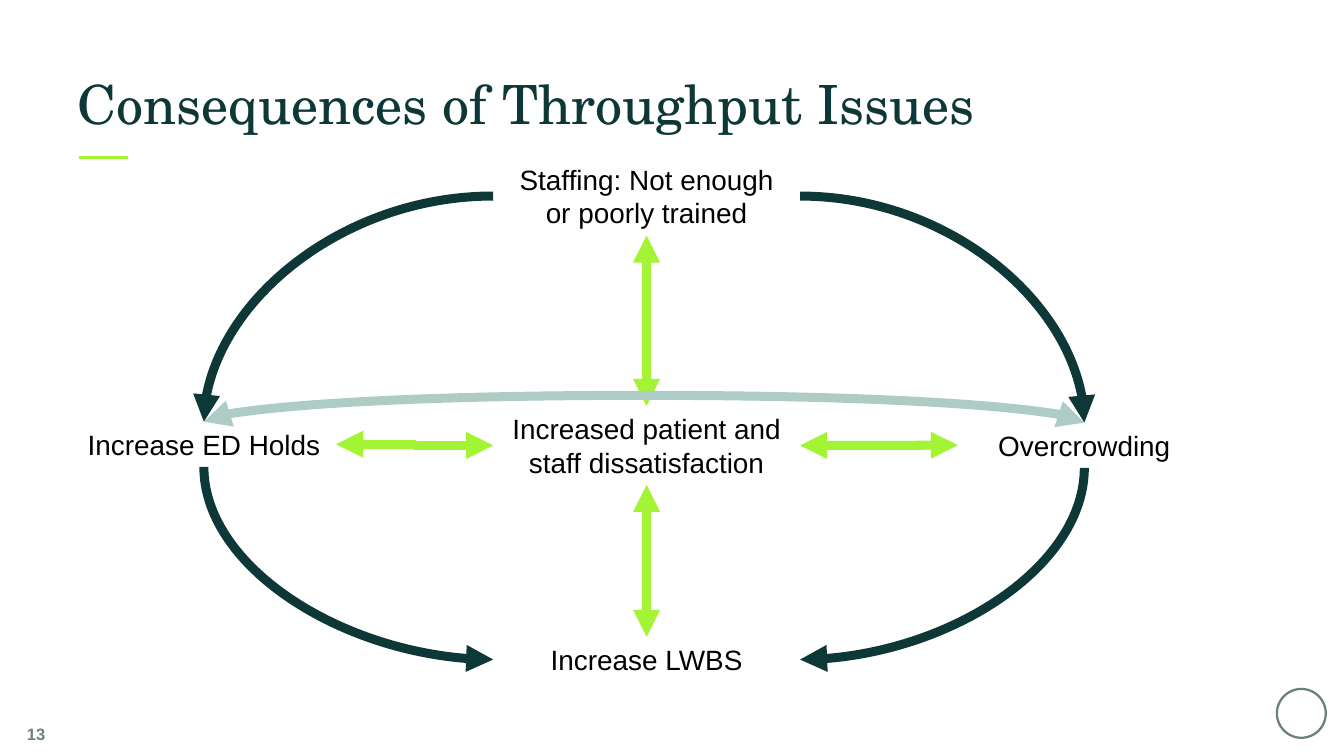
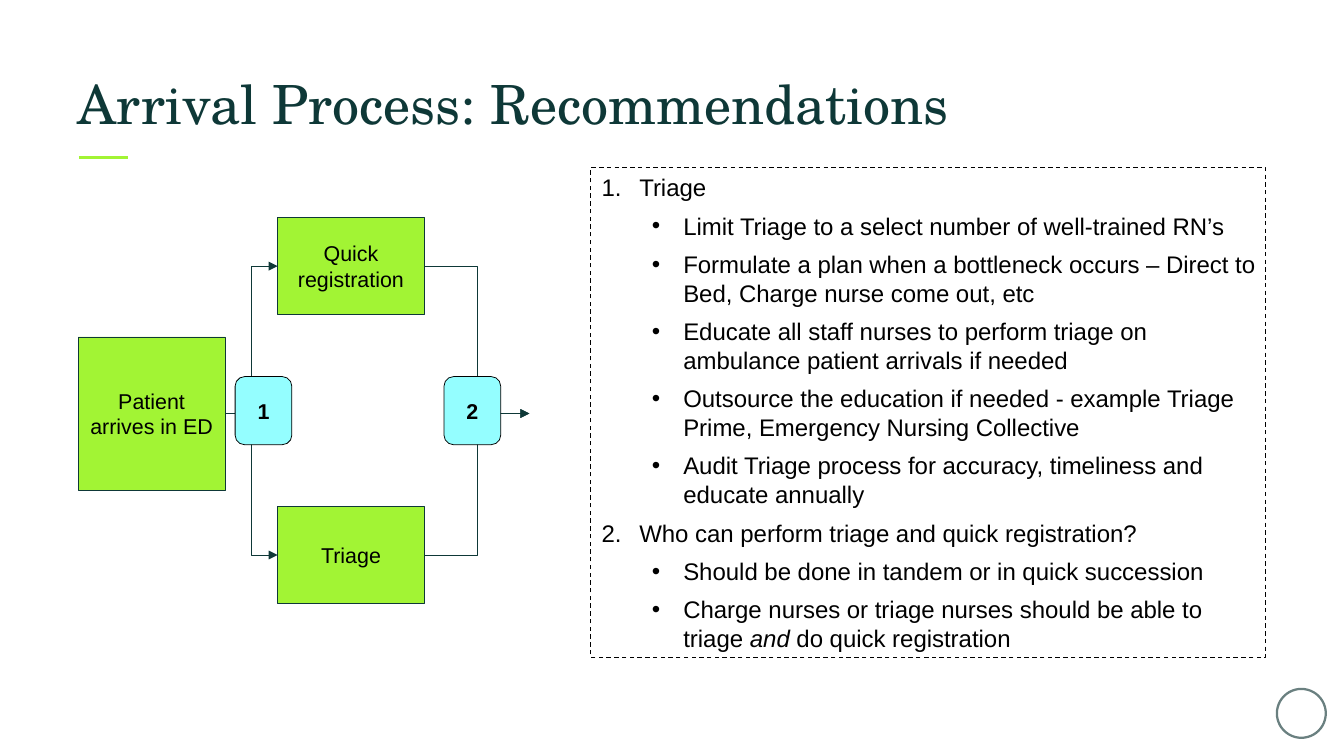
from math import cos, radians, sin

from lxml.etree import SubElement
from pptx import Presentation
from pptx.dml.color import RGBColor
from pptx.enum.dml import MSO_LINE
from pptx.enum.shapes import MSO_CONNECTOR, MSO_SHAPE
from pptx.enum.text import MSO_ANCHOR, MSO_AUTO_SIZE, PP_ALIGN
from pptx.oxml.ns import qn
from pptx.util import Pt

PINE = RGBColor(0x0E, 0x38, 0x37)
LIME = RGBColor(0xA2, 0xF4, 0x34)
MIST = RGBColor(0xAD, 0xCC, 0xC6)
AQUA = RGBColor(0x94, 0xFE, 0xFF)
SLATE = RGBColor(0x6A, 0x80, 0x80)
BLACK = RGBColor(0, 0, 0)
SERIF, SANS = "TeX Gyre Schola", "Arial"
TOP, LEFT, BOTTOM, RIGHT = range(4)

RECOMMENDATIONS = [
    ("Triage", [
        ["Limit Triage to a select number of well-trained RN’s"],
        ["Formulate a plan when a bottleneck occurs – Direct to Bed, "
         "Charge nurse come out, etc"],
        ["Educate all staff nurses to perform triage on ambulance patient "
         "arrivals if needed"],
        ["Outsource the education if needed - example Triage Prime, "
         "Emergency Nursing Collective"],
        ["Audit Triage process for accuracy, timeliness and educate annually"],
    ]),
    ("Who can perform triage and quick registration?", [
        ["Should be done in tandem or in quick succession"],
        ["Charge nurses or triage nurses should be able to triage ", "and",
         " do quick registration"],
    ]),
]


def style(para, size, colour=BLACK, name=SANS, bold=False):
    font = para.font
    font.name, font.size, font.bold = name, Pt(size), bold
    font.color.rgb = colour


def write(box, text, size, align=PP_ALIGN.CENTER, anchor=MSO_ANCHOR.MIDDLE, **look):
    frame = box.text_frame
    frame.word_wrap = True
    frame.vertical_anchor = anchor
    para = frame.paragraphs[0]
    para.text, para.alignment = text, align
    style(para, size, **look)
    return frame


def add_label(page, left, top, width, height, text):
    box = page.shapes.add_textbox(Pt(left), Pt(top), Pt(width), Pt(height))
    write(box, text, 18.6).auto_size = MSO_AUTO_SIZE.SHAPE_TO_FIT_TEXT
    return box


def add_panel(page, preset, left, top, width, height, fill, outline, weight):
    panel = page.shapes.add_shape(preset, Pt(left), Pt(top), Pt(width), Pt(height))
    panel.shadow.inherit = False
    if fill is None:
        panel.fill.background()
    else:
        panel.fill.solid()
        panel.fill.fore_color.rgb = fill
    panel.line.color.rgb = outline
    panel.line.width = Pt(weight)
    return panel


def middle(box, site):
    """Return the middle of a box's side."""
    x = {LEFT: 0, RIGHT: box.width}.get(site, box.width // 2)
    y = {TOP: 0, BOTTOM: box.height}.get(site, box.height // 2)
    return box.left + x, box.top + y


def link(page, route, start, end, colour, weight, ends=("tailEnd",), turn=0):
    """Draw a connector whose frame is turned clockwise by some quarter turns."""
    half_x, half_y = (end[0] - start[0]) / 2, (end[1] - start[1]) / 2
    centre_x, centre_y = start[0] + half_x, start[1] + half_y
    c, s = round(cos(radians(turn))), round(sin(radians(turn)))
    local_x, local_y = c * half_x + s * half_y, c * half_y - s * half_x
    line = page.shapes.add_connector(
        route, int(centre_x - local_x), int(centre_y - local_y),
        int(centre_x + local_x), int(centre_y + local_y))
    line.line.color.rgb = colour
    line.line.width = Pt(weight)
    properties = line._element.spPr
    if turn:
        properties.find(qn("a:xfrm")).set("rot", str(turn * 60000))
    for end_name in ends:
        SubElement(properties.find(qn("a:ln")), qn("a:" + end_name), type="triangle")
    SubElement(properties, qn("a:effectLst"))
    return line


def join(page, route, begin, end, *look, **more):
    """Link two (box, side) pairs and fasten both ends."""
    line = link(page, route, middle(*begin), middle(*end), *look, **more)
    line.begin_connect(*begin)
    line.end_connect(*end)


def add_arc(page, begin, end, turn):
    line = link(page, MSO_CONNECTOR.CURVE, middle(*begin), middle(*end), PINE, 6, turn=turn)
    line._element.spPr.find(qn("a:prstGeom")).set("prst", "curvedConnector2")


def add_bow(page, begin, end, rise):
    """Draw a shallow curve with two heads that rises above both its ends."""
    start, finish = middle(*begin), middle(*end)
    line = link(page, MSO_CONNECTOR.CURVE, start, finish, MIST, 6,
                ends=("headEnd", "tailEnd"), turn=270)
    bend = round(-Pt(rise) / (finish[1] - start[1]) * 100000)
    values = line._element.spPr.find(qn("a:prstGeom")).find(qn("a:avLst"))
    SubElement(values, qn("a:gd"), name="adj1", fmla=f"val {bend}")


def add_frame(page, title):
    """Place the title, its accent rule and the round corner mark."""
    add_panel(page, MSO_SHAPE.OVAL, 851, 459.3, 32.6, 32.6, None, SLATE, 1.5)
    link(page, MSO_CONNECTOR.STRAIGHT, (Pt(52.6), Pt(105)), (Pt(85.3), Pt(105)),
         LIME, 2, ends=())
    box = page.shapes.add_textbox(Pt(51.8), Pt(36), Pt(792), Pt(54))
    frame = write(box, title, 36, PP_ALIGN.LEFT, MSO_ANCHOR.BOTTOM,
                  colour=PINE, name=SERIF)
    frame.margin_left = frame.margin_right = frame.margin_top = frame.margin_bottom = 0


def add_page_number(page, number):
    box = page.shapes.add_textbox(0, Pt(474.3), Pt(30.2), Pt(30.2))
    frame = write(box, number, 11, PP_ALIGN.RIGHT, colour=SLATE, bold=True)
    frame.margin_left = frame.margin_right = frame.margin_top = frame.margin_bottom = 0


def add_cycle(page, left, top):
    column = left + 281.2
    staffing = add_label(page, column, top, 204.5, 52.6,
                         "Staffing: Not enough or poorly trained")
    dissatisfaction = add_label(page, column, top + 166.3, 204.5, 52.6,
                                "Increased patient and staff dissatisfaction")
    overcrowding = add_label(page, left + 590.9, top + 177.3, 168.5, 30.2, "Overcrowding")
    walkouts = add_label(page, column, top + 320.2, 204.5, 30.2, "Increase LWBS")
    holds = add_label(page, left + 0.2, top + 176.7, 176.4, 30.2, "Increase ED Holds")

    add_arc(page, (staffing, RIGHT), (overcrowding, TOP), 0)
    add_arc(page, (overcrowding, BOTTOM), (walkouts, RIGHT), 90)
    for route, begin, end in [
        (MSO_CONNECTOR.ELBOW, (holds, RIGHT), (dissatisfaction, LEFT)),
        (MSO_CONNECTOR.STRAIGHT, (staffing, BOTTOM), (dissatisfaction, TOP)),
        (MSO_CONNECTOR.STRAIGHT, (dissatisfaction, BOTTOM), (walkouts, TOP)),
        (MSO_CONNECTOR.STRAIGHT, (dissatisfaction, RIGHT), (overcrowding, LEFT)),
    ]:
        join(page, route, begin, end, LIME, 6, ends=("headEnd", "tailEnd"))
    add_arc(page, (staffing, LEFT), (holds, TOP), 180)
    add_bow(page, (holds, TOP), (overcrowding, TOP), 17.7)
    add_arc(page, (holds, BOTTOM), (walkouts, LEFT), 270)


def add_arrival_flow(page, left, top):
    def step(x, y, height, text):
        panel = add_panel(page, MSO_SHAPE.RECTANGLE, left + x, top + y, 97.9, height,
                          LIME, PINE, 0.5)
        write(panel, text, 14.3)
        return panel

    arrival = step(0, 79.5, 102.2, "Patient arrives in ED")
    registration = step(132.9, 0, 64.8, "Quick registration")
    triage = step(132.9, 192.5, 64.8, "Triage")
    way_out = Pt(left + 300.7), middle(arrival, RIGHT)[1]
    for task in (registration, triage):
        join(page, MSO_CONNECTOR.ELBOW, (arrival, RIGHT), (task, LEFT), PINE, 0.5)
        line = link(page, MSO_CONNECTOR.ELBOW, middle(task, RIGHT), way_out, PINE, 0.5)
        line.begin_connect(task, RIGHT)
    for x, number in ((104.6, "1"), (243.8, "2")):
        badge = add_panel(page, MSO_SHAPE.FLOWCHART_ALTERNATE_PROCESS, left + x, top + 106,
                          37.8, 45.4, AQUA, BLACK, 0.5)
        write(badge, number, 14.3, bold=True)


def add_item(frame, pieces, level):
    """Add a numbered (level 0) or bulleted (level 1) item; odd pieces are italic."""
    first = frame.paragraphs[0]
    para = frame.add_paragraph() if first.runs else first
    para.level = level
    para.alignment = PP_ALIGN.LEFT
    para.space_after = Pt(6.4)
    indent, hanging = ((25.2, 25.2), (54.5, 20.9))[level]
    properties = para._p.get_or_add_pPr()
    properties.set("marL", str(Pt(indent)))
    properties.set("indent", str(-Pt(hanging)))
    if level:
        SubElement(properties, qn("a:buFont"), typeface=SANS)
        SubElement(properties, qn("a:buChar"), char="•")
    else:
        SubElement(properties, qn("a:buFont"), typeface="+mj-lt")
        SubElement(properties, qn("a:buAutoNum"), type="arabicPeriod")
    style(para, 16)
    for index, piece in enumerate(pieces):
        span = para.add_run()
        span.text = piece
        # Runs in a shape take their colour from the shape unless they carry their own.
        span.font.color.rgb = BLACK
        if index % 2:
            span.font.italic = True


def add_recommendations(page, left, top, width, height):
    panel = add_panel(page, MSO_SHAPE.RECTANGLE, left, top, width, height, None, BLACK, 0.75)
    panel.line.dash_style = MSO_LINE.DASH
    frame = panel.text_frame
    frame.word_wrap = True
    frame.margin_right = Pt(6)
    frame.vertical_anchor = MSO_ANCHOR.TOP
    frame.auto_size = MSO_AUTO_SIZE.SHAPE_TO_FIT_TEXT
    for heading, points in RECOMMENDATIONS:
        add_item(frame, [heading], 0)
        for pieces in points:
            add_item(frame, pieces, 1)


def main():
    deck = Presentation()
    deck.slide_width, deck.slide_height = Pt(895.7), Pt(504)
    blank = deck.slide_layouts[6]

    page = deck.slides.add_slide(blank)
    add_frame(page, "Consequences of Throughput Issues")
    add_cycle(page, 47.5, 104.4)
    add_page_number(page, "13")

    page = deck.slides.add_slide(blank)
    add_frame(page, "Arrival Process: Recommendations")
    add_arrival_flow(page, 52.1, 145.1)
    add_recommendations(page, 393.8, 111.6, 449.6, 326.9)

    deck.save("out.pptx")


if __name__ == "__main__":
    main()
